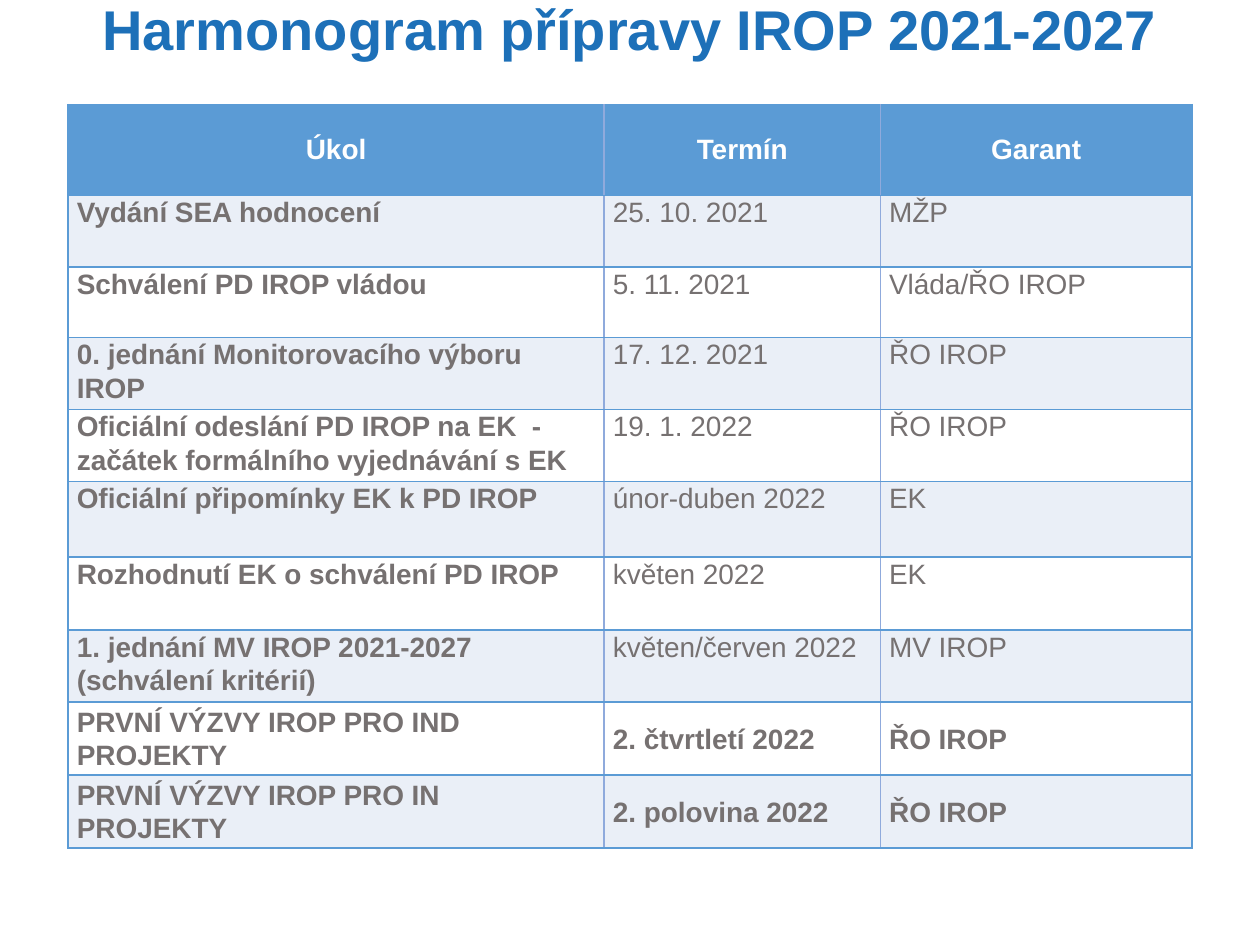
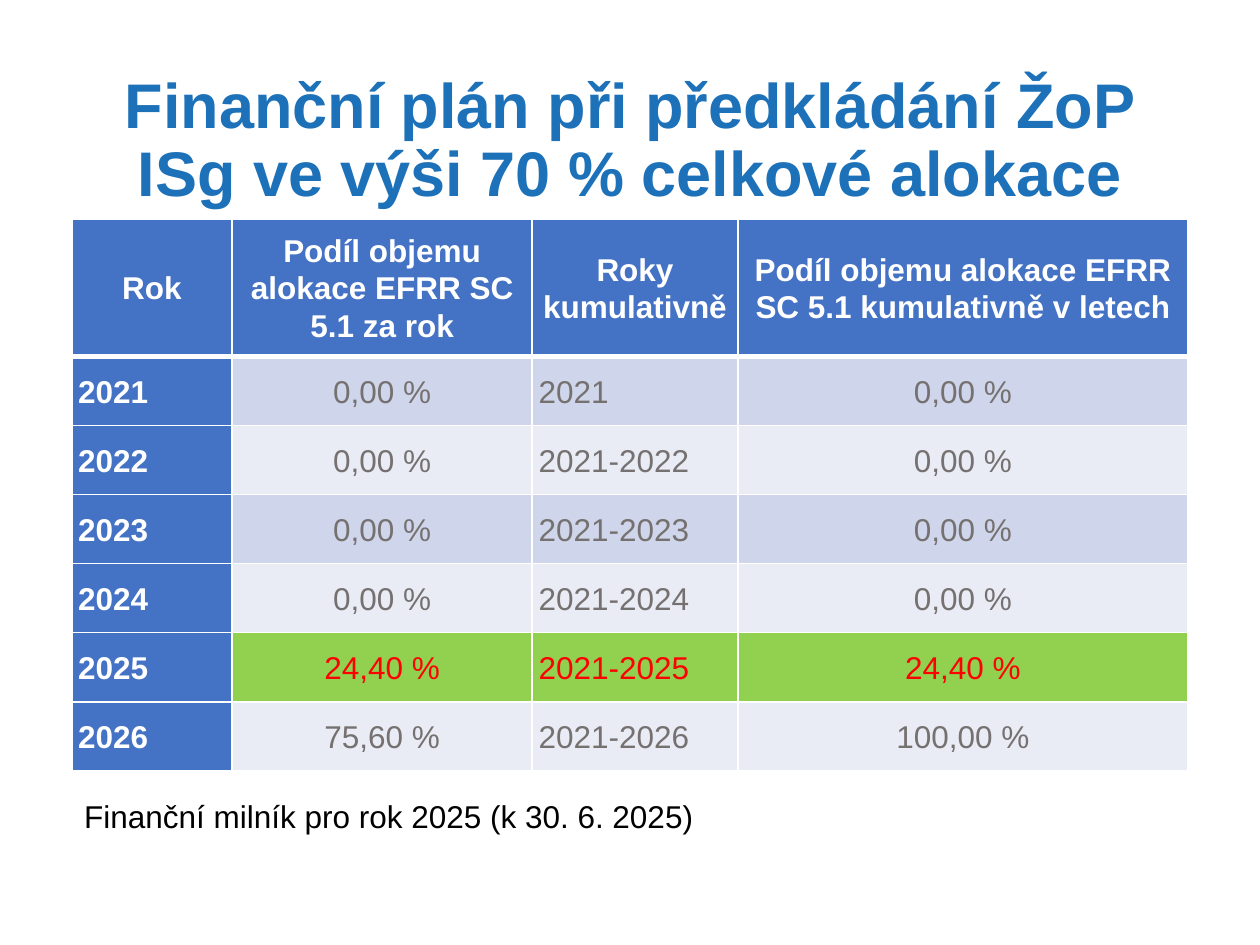
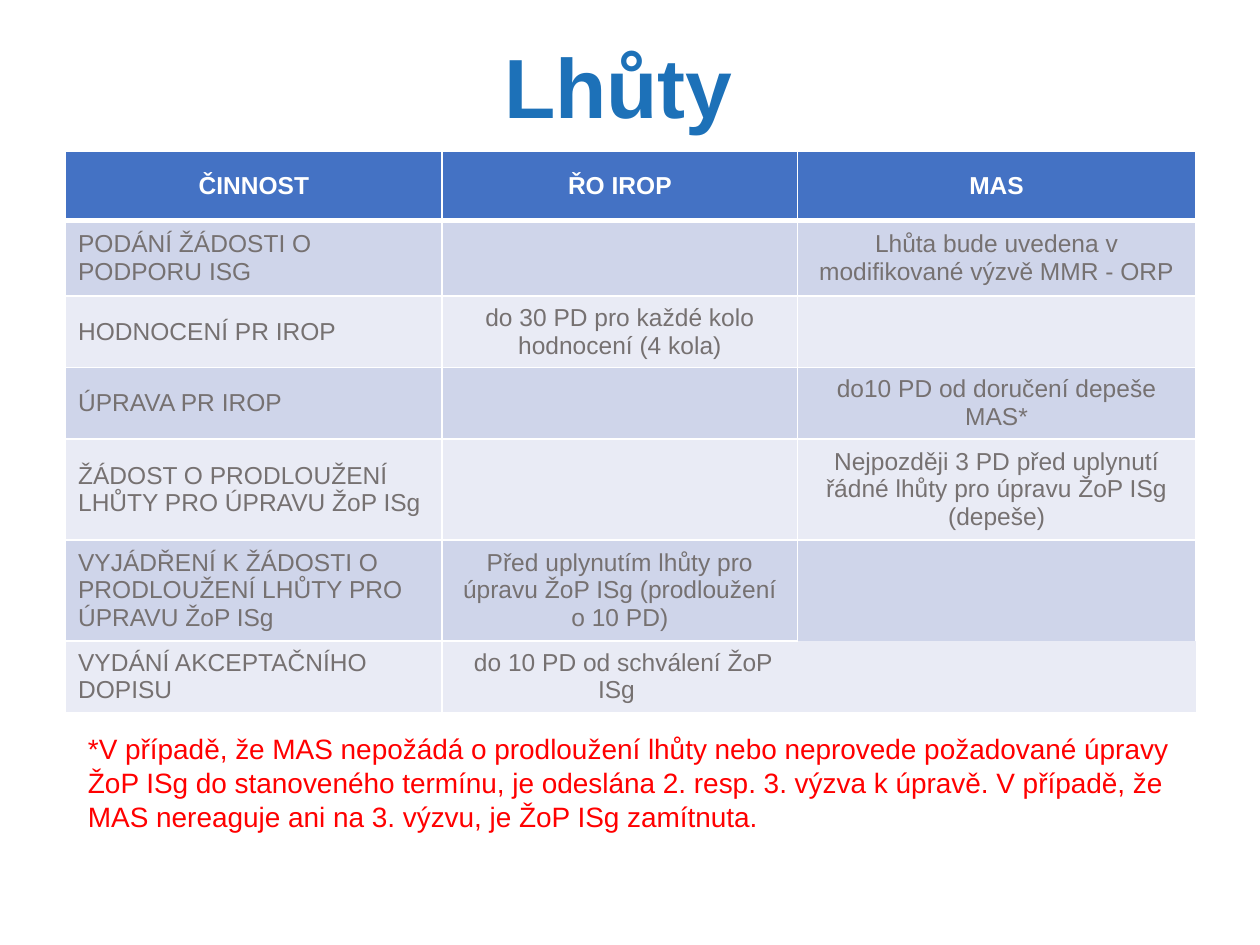
import pptx
import pptx.util
import pptx.dml.color
import pptx.enum.text
import pptx.oxml
import pptx.oxml.ns
from lxml import etree

RGBColor = pptx.dml.color.RGBColor
ANCHOR = pptx.enum.text.MSO_ANCHOR
ALIGN = pptx.enum.text.PP_ALIGN

UNIT = pptx.util.Inches(0.1)
FONT_NAME = "Arial"
TITLE_BLUE = RGBColor(0x1D, 0x71, 0xB8)
SCHEDULE_TITLE_BLUE = RGBColor(0x1D, 0x70, 0xB8)
SCHEDULE_BLUE = RGBColor(0x5B, 0x9B, 0xD5)
SCHEDULE_DIVIDER = RGBColor(0x8F, 0xAA, 0xDC)
SCHEDULE_BAND = RGBColor(0xEA, 0xEF, 0xF7)
HEADER_BLUE = RGBColor(0x44, 0x72, 0xC4)
DARK_BAND = RGBColor(0xCF, 0xD5, 0xEA)
LIGHT_BAND = RGBColor(0xE9, 0xEB, 0xF5)
MILESTONE_GREEN = RGBColor(0x92, 0xD0, 0x50)
GREY = RGBColor(0x76, 0x71, 0x71)
RED = RGBColor(0xFF, 0x00, 0x00)
WHITE = RGBColor(0xFF, 0xFF, 0xFF)
BLACK = RGBColor(0x00, 0x00, 0x00)

SCHEDULE = [
    ("Úkol", "Termín", "Garant"),
    ("Vydání SEA hodnocení", "25. 10. 2021", "MŽP"),
    ("Schválení PD IROP vládou", "5. 11. 2021", "Vláda/ŘO IROP"),
    ("0. jednání Monitorovacího výboru IROP", "17. 12. 2021", "ŘO IROP"),
    ("Oficiální odeslání PD IROP na EK  -\nzačátek formálního vyjednávání s EK",
     "19. 1. 2022", "ŘO IROP"),
    ("Oficiální připomínky EK k PD IROP", "únor-duben 2022", "EK"),
    ("Rozhodnutí EK o schválení PD IROP", "květen 2022", "EK"),
    ("1. jednání MV IROP 2021-2027\n(schválení kritérií)",
     "květen/červen 2022", "MV IROP"),
    ("PRVNÍ VÝZVY IROP PRO IND PROJEKTY", "2. čtvrtletí 2022", "ŘO IROP"),
    ("PRVNÍ VÝZVY IROP PRO IN PROJEKTY", "2. polovina 2022", "ŘO IROP"),
]
FIRST_CALLS_ROW = 8

FINANCIAL_PLAN = [
    ("Rok", "Podíl objemu alokace EFRR SC 5.1 za rok", "Roky kumulativně",
     "Podíl objemu alokace EFRR SC 5.1 kumulativně v letech"),
    ("2021", "0,00 %", "2021", "0,00 %"),
    ("2022", "0,00 %", "2021-2022", "0,00 %"),
    ("2023", "0,00 %", "2021-2023", "0,00 %"),
    ("2024", "0,00 %", "2021-2024", "0,00 %"),
    ("2025", "24,40 %", "2021-2025", "24,40 %"),
    ("2026", "75,60 %", "2021-2026", "100,00 %"),
]
MILESTONE_ROW = 5

DEADLINES = [
    ("ČINNOST", "ŘO IROP", "MAS"),
    ("PODÁNÍ ŽÁDOSTI O PODPORU ISG", "",
     "Lhůta bude uvedena v modifikované výzvě MMR - ORP"),
    ("HODNOCENÍ PR IROP", "do 30 PD pro každé kolo hodnocení (4 kola)", ""),
    ("ÚPRAVA PR IROP", "", "do10 PD od doručení depeše MAS*"),
    ("ŽÁDOST O PRODLOUŽENÍ LHŮTY PRO ÚPRAVU ŽoP ISg", "",
     "Nejpozději 3 PD před uplynutí řádné lhůty pro úpravu ŽoP ISg (depeše)"),
    ("VYJÁDŘENÍ K ŽÁDOSTI O PRODLOUŽENÍ LHŮTY PRO ÚPRAVU ŽoP ISg",
     "Před uplynutím lhůty pro úpravu ŽoP ISg (prodloužení o 10 PD)", ""),
    ("VYDÁNÍ AKCEPTAČNÍHO DOPISU", " do 10 PD od schválení ŽoP ISg ", ""),
]


def write_text(frame, text, size, color, bold=False, align=ALIGN.LEFT, spacing=1.0):
    """Fill a text frame with uniformly formatted paragraphs."""
    frame.word_wrap = True
    frame.text = text
    for paragraph in frame.paragraphs:
        paragraph.alignment = align
        paragraph.line_spacing = spacing
        paragraph.font.name = FONT_NAME
        paragraph.font.size = pptx.util.Pt(size)
        paragraph.font.bold = bold
        paragraph.font.color.rgb = color


def add_text(slide, box, text, size, color, **style):
    """Add a text box at a box given in grid units."""
    shape = slide.shapes.add_textbox(*(int(length * UNIT) for length in box))
    write_text(shape.text_frame, text, size, color, **style)
    return shape.text_frame


def add_title(slide, box, text, size, color=TITLE_BLUE, anchor=ANCHOR.MIDDLE):
    """Add the bold centred slide title."""
    frame = add_text(slide, box, text, size, color, bold=True,
                     align=ALIGN.CENTER, spacing=0.9)
    frame.vertical_anchor = anchor
    return frame


def set_borders(cell, borders):
    """Draw the given sides as (colour, points) and hide the others."""
    properties = cell._tc.get_or_add_tcPr()
    for side in "LRTB":
        line = etree.SubElement(properties, pptx.oxml.ns.qn(f"a:ln{side}"))
        if side not in borders:
            etree.SubElement(line, pptx.oxml.ns.qn("a:noFill"))
            continue
        color, width = borders[side]
        line.set("w", str(pptx.util.Pt(width)))
        fill = etree.SubElement(line, pptx.oxml.ns.qn("a:solidFill"))
        etree.SubElement(fill, pptx.oxml.ns.qn("a:srgbClr"), val=str(color))


def add_grid(slide, box, column_weights, row_weights, rows, style_cell, margins=None):
    """Add a table, sharing out the box by weights and styling each cell by rule."""
    left, top, width, height = (int(length * UNIT) for length in box)
    table = slide.shapes.add_table(len(rows), len(column_weights),
                                   left, top, width, height).table
    for column, weight in zip(table.columns, column_weights):
        column.width = int(width * weight / sum(column_weights))
    for row, weight in zip(table.rows, row_weights):
        row.height = int(height * weight / sum(row_weights))
    for row_index, texts in enumerate(rows):
        for column_index, text in enumerate(texts):
            cell = table.cell(row_index, column_index)
            fill, borders, anchor, text_style = style_cell(row_index, column_index)
            set_borders(cell, borders)
            cell.fill.solid()
            cell.fill.fore_color.rgb = fill
            cell.vertical_anchor = anchor
            if margins is not None:
                cell.margin_left = cell.margin_right = pptx.util.Inches(margins)
                cell.margin_top = cell.margin_bottom = 0
            write_text(cell.text_frame, text, **text_style)


def white_borders(row):
    """Return white cell borders with a thick rule under the header."""
    return {"L": (WHITE, 1), "R": (WHITE, 1),
            "T": (WHITE, 3 if row == 1 else 1),
            "B": (WHITE, 3 if row == 0 else 1)}


def style_schedule(row, column):
    """Style one cell of the schedule."""
    header = row == 0
    fill = SCHEDULE_BLUE if header else SCHEDULE_BAND if row % 2 else WHITE
    borders = {"L": (SCHEDULE_DIVIDER if column else SCHEDULE_BLUE, 1),
               "R": (SCHEDULE_BLUE if column == 2 else SCHEDULE_DIVIDER, 1),
               "T": (SCHEDULE_BLUE, 1), "B": (SCHEDULE_BLUE, 1)}
    emphasised = header or row >= FIRST_CALLS_ROW
    return fill, borders, ANCHOR.MIDDLE if emphasised else ANCHOR.TOP, {
        "size": 16, "color": WHITE if header else GREY,
        "bold": emphasised or column == 0,
        "align": ALIGN.CENTER if header else ALIGN.LEFT,
        "spacing": 1.0 if header else 1.07}


def style_plan(row, column):
    """Style one cell of the financial plan."""
    heading = row == 0 or column == 0
    fill, color = (DARK_BAND if row % 2 else LIGHT_BAND), GREY
    if heading:
        fill, color = HEADER_BLUE, WHITE
    elif row == MILESTONE_ROW:
        fill, color = MILESTONE_GREEN, RED
    centred = row == 0 or column % 2 == 1
    return fill, white_borders(row), ANCHOR.MIDDLE, {
        "size": 18, "color": color, "bold": heading, "spacing": 1.07,
        "align": ALIGN.CENTER if centred else ALIGN.LEFT}


def style_deadlines(row, column):
    """Style one cell of the deadlines, leaving the last corner open."""
    header = row == 0
    fill = HEADER_BLUE if header else DARK_BAND if row % 2 else LIGHT_BAND
    open_sides = {(5, 2): "B", (6, 1): "R", (6, 2): "LRTB"}.get((row, column), "")
    borders = {side: line for side, line in white_borders(row).items()
               if side not in open_sides}
    return fill, borders, ANCHOR.MIDDLE, {
        "size": 14, "color": WHITE if header else GREY, "bold": header,
        "align": ALIGN.CENTER if header or column else ALIGN.LEFT}


def build_schedule(slide):
    """Build the programme preparation schedule."""
    title = add_title(slide, (6.9, 0.2, 86.2, 13.7), "Harmonogram přípravy IROP 2021-2027",
                      32, SCHEDULE_TITLE_BLUE, ANCHOR.TOP)
    title.margin_top = 0
    add_grid(slide, (5.4, 8.3, 89.2, 58.2), (4.25, 2.19, 2.47),
             (0.72, 0.57, 0.56, 0.53, 0.54, 0.6, 0.58, 0.56, 0.58, 0.58),
             SCHEDULE, style_schedule, 0.07)


def build_plan(slide):
    """Build the financial plan with its milestone note."""
    add_title(slide, (6.9, 4, 86.2, 14.5),
              "Finanční plán při předkládání ŽoP ISg ve výši 70 % celkové alokace", 36)
    add_grid(slide, (5.7, 17.4, 88.6, 43.8), (1.27, 2.38, 1.63, 3.57),
             (1.09,) + (0.55,) * 6, FINANCIAL_PLAN, style_plan, 0.05)
    add_text(slide, (5.7, 62.8, 62.6, 4),
             "Finanční milník pro rok 2025 (k 30. 6. 2025)", 18, BLACK)


def build_deadlines(slide):
    """Build the deadlines with the footnote on missed ones."""
    add_title(slide, (6.9, 0, 86.2, 14.5), "Lhůty ", 48)
    add_grid(slide, (5.2, 12, 89.7, 42.8), (2.99, 2.82, 3.16),
             (0.55, 0.6, 0.54, 0.54, 0.76, 0.76, 0.53), DEADLINES, style_deadlines)
    add_text(slide, (6, 57.6, 88, 9.1),
             "*V případě, že MAS nepožádá o prodloužení lhůty nebo neprovede "
             "požadované úpravy ŽoP ISg do stanoveného termínu, je odeslána 2. resp. "
             "3. výzva k úpravě. V případě, že MAS nereaguje ani na 3. výzvu, "
             "je ŽoP ISg zamítnuta.", 16, RED)


def main():
    """Build and save the presentation."""
    presentation = pptx.Presentation()
    presentation.slide_width = 100 * UNIT
    presentation.slide_height = 75 * UNIT
    blank_layout = presentation.slide_layouts[6]
    for build in (build_schedule, build_plan, build_deadlines):
        build(presentation.slides.add_slide(blank_layout))
    presentation.save("out.pptx")


if __name__ == "__main__":
    main()
